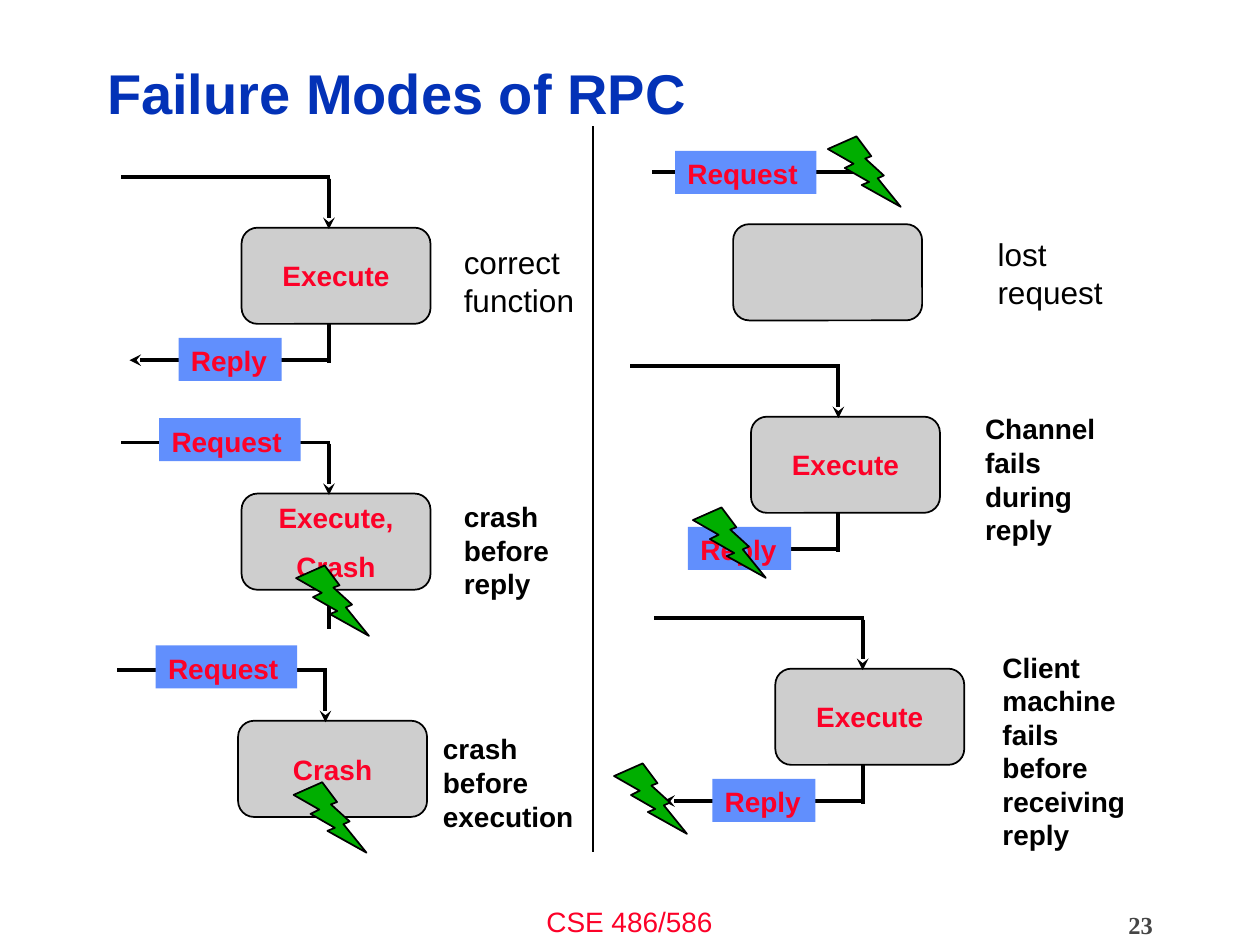
from lxml import etree
from pptx import Presentation
from pptx.dml.color import RGBColor
from pptx.enum import shapes, text
from pptx.oxml import ns
from pptx.util import Cm, Pt

BLACK = RGBColor(0, 0, 0)
BLUE = RGBColor(0x03, 0x32, 0xB7)
RED = RGBColor(0xFC, 0x01, 0x28)
GREY = RGBColor(0xCE, 0xCE, 0xCE)
SKY = RGBColor(0x61, 0x8F, 0xFD)
GREEN = RGBColor(0x00, 0xAE, 0x00)
SLATE = RGBColor(0x45, 0x45, 0x45)
KIND = shapes.MSO_SHAPE
MIDDLE = text.MSO_ANCHOR.MIDDLE
LEFT, CENTER, RIGHT = (text.PP_ALIGN.LEFT, text.PP_ALIGN.CENTER,
                       text.PP_ALIGN.RIGHT)

BOX_W, BOX_H = 3.81, 1.94
STEM = 1.76    # from the left side of a box to its vertical lines
CALL = -1.03   # from the top of a box to the incoming line
BACK = 2.67    # from the top of a box to the outgoing line


class Deck:
    """Holds the style and the current slide; lengths are in centimetres."""

    def __init__(self):
        self.show = Presentation()
        self.show.slide_width, self.show.slide_height = Cm(25.4), Cm(19.05)
        self.slide = self.show.slides.add_slide(self.show.slide_layouts[6])

    def fill_text(self, frame, lines, size, color, bold, align, font="Arial"):
        for i, line in enumerate(lines):
            para = frame.paragraphs[0] if i == 0 else frame.add_paragraph()
            para.text = line
            para.alignment = align
            if i:
                para.space_before = Pt(9)
            para.font.name, para.font.size = font, Pt(size)
            para.font.bold, para.font.color.rgb = bold, color

    def note(self, x, y, w, h, words, size=16, color=BLACK, bold=True,
             align=LEFT, font="Arial"):
        frame = self.slide.shapes.add_textbox(
            Cm(x), Cm(y), Cm(w), Cm(h)).text_frame
        frame.word_wrap = True
        self.fill_text(frame, [words], size, color, bold, align, font)
        return frame

    def shape(self, kind, x, y, w, h, fill, edge=True):
        item = self.slide.shapes.add_shape(kind, Cm(x), Cm(y), Cm(w), Cm(h))
        item.shadow.inherit = False
        item.fill.solid()
        item.fill.fore_color.rgb = fill
        if edge:
            item.line.color.rgb, item.line.width = BLACK, Pt(1)
        else:
            item.line.fill.background()
        return item

    def box(self, x, y, lines):
        frame = self.shape(KIND.ROUNDED_RECTANGLE, x, y, BOX_W, BOX_H,
                           GREY).text_frame
        frame.word_wrap = False
        frame.vertical_anchor = MIDDLE
        self.fill_text(frame, lines, 16, RED, True, CENTER)

    def label(self, x, y, w, words):
        frame = self.shape(KIND.RECTANGLE, x, y, w, 0.87, SKY,
                           edge=False).text_frame
        frame.vertical_anchor = text.MSO_ANCHOR.TOP
        self.fill_text(frame, [words], 16, RED, True, LEFT)

    def bolt(self, x, y):
        self.shape(KIND.LIGHTNING_BOLT, x, y, 1.47, 1.42, GREEN)

    def line(self, x1, y1, x2, y2, width=2.25, arrow=False):
        item = self.slide.shapes.add_connector(
            shapes.MSO_CONNECTOR.STRAIGHT, Cm(x1), Cm(y1), Cm(x2), Cm(y2))
        item.line.color.rgb, item.line.width = BLACK, Pt(width)
        props = item._element.spPr
        if arrow:
            tail = etree.SubElement(props.find(ns.qn("a:ln")),
                                    ns.qn("a:tailEnd"))
            tail.set("type", "stealth")
        etree.SubElement(props, ns.qn("a:effectLst"))

    def scene(self, x, y, lines, request=False, stem=True, reply=None,
              bolt=None):
        """One call: box at x, y; reply and bolt are offsets from it."""
        self.box(x, y, lines)
        self.line(x + STEM, y + CALL + 0.04, x + STEM, y + 0.03, arrow=True)
        self.line(x + STEM + 0.03, y + CALL, x - 2.44, y + CALL)
        if stem:
            self.line(x + STEM, y + BOX_H, x + STEM, y + BACK + 0.05)
        if reply is not None:
            self.line(x + STEM, y + BACK, x + reply, y + BACK, arrow=True)
            self.label(x - 1.27, y + 2.22, 2.08, "Reply")
        if request:
            self.label(x - 1.66, y - 1.52, 2.85, "Request")
        if bolt:
            self.bolt(x + bolt[0], y + bolt[1])

    def lost(self, x, y):
        """A call whose request never reaches the box."""
        self.box(x, y, [])
        self.line(x + 2.62, y - 1.06, x - 1.63, y - 1.06)
        self.label(x - 1.17, y - 1.48, 2.85, "Request")
        self.bolt(x + 1.91, y - 1.77)


def main():
    deck = Deck()
    title = deck.note(1.91, 0.91, 20.27, 2.06, "Failure Modes of RPC", 32,
                      BLUE)
    title.vertical_anchor = MIDDLE
    title.paragraphs[0].line_spacing = 0.9

    deck.scene(4.87, 4.59, ["Execute"], reply=-2.26)
    deck.scene(4.87, 9.95, ["Execute,", "Crash"], request=True,
               bolt=(1.1, 1.45))
    deck.scene(4.8, 14.53, ["Crash"], request=True, stem=False,
               bolt=(1.12, 1.24))
    deck.lost(14.78, 4.52)
    deck.scene(15.14, 8.4, ["Execute"], reply=-0.79, bolt=(-1.17, 1.83))
    deck.scene(15.63, 13.48, ["Execute"], reply=-2.26, bolt=(-3.25, 1.91))
    deck.line(11.96, 2.54, 11.96, 17.17, width=1)

    for x, y, w, h, words in (
            (9.1, 4.77, 2.84, 1.63, "correct function"),
            (19.86, 4.62, 2.84, 1.63, "lost request")):
        deck.note(x, y, w, h, words, size=18, bold=False)
    for x, y, w, h, words in (
            (9.1, 9.95, 2.84, 2.08, "crash before reply"),
            (8.68, 14.63, 3.2, 2.08, "crash before execution"),
            (19.61, 8.18, 2.84, 2.72, "Channel fails during reply"),
            (19.96, 12.98, 3.1, 3.94,
             "Client machine fails before receiving reply")):
        deck.note(x, y, w, h, words)

    deck.note(8.46, 18.11, 8.46, 0.94, "CSE 486/586", 16, RED, False, CENTER)
    page = deck.note(18.21, 18.24, 5.28, 0.81, "23", 14, SLATE, True, RIGHT,
                     "Times New Roman")
    page.vertical_anchor = MIDDLE
    deck.show.save("out.pptx")


if __name__ == "__main__":
    main()
